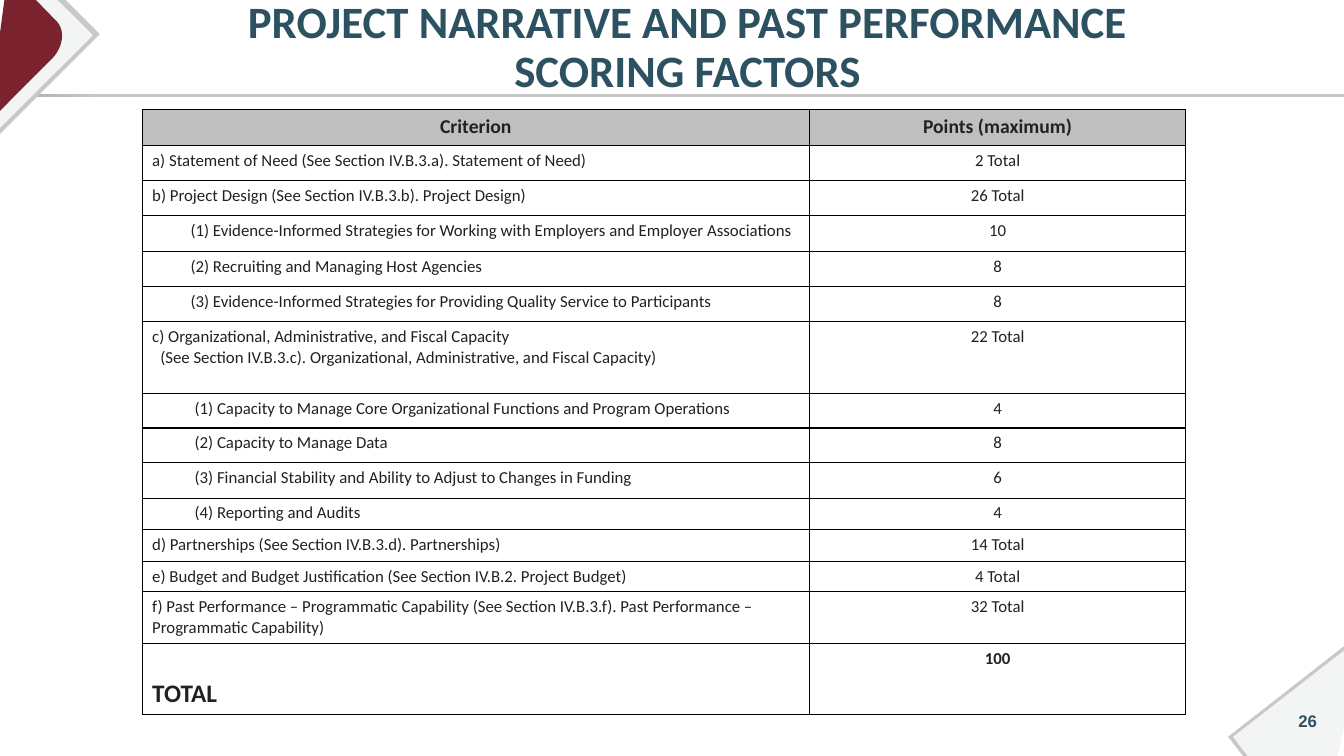
from lxml.etree import SubElement
from pptx import Presentation
from pptx.dml.color import RGBColor
from pptx.enum.shapes import MSO_SHAPE
from pptx.enum.text import MSO_ANCHOR, PP_ALIGN
from pptx.oxml.ns import qn
from pptx.util import Inches, Pt

NAVY = RGBColor(0x2C, 0x52, 0x61)
INK = RGBColor(0x24, 0x20, 0x21)
MAROON = RGBColor(0x7A, 0x23, 0x2F)
SILVER = RGBColor(0xC8, 0xC8, 0xC6)
STEEL = RGBColor(0xAB, 0xAB, 0xA8)
PALE = RGBColor(0xF3, 0xF4, 0xF4)
HEADER = RGBColor(0xBF, 0xBF, 0xBF)

ROW = 0.35
SUB = 0.38   # indent of a sub-criterion in b)
DEEP = 0.42  # indent of a sub-criterion in c)

# Each row: height, criterion, points, indent
DESIGN_ROWS = [
    (ROW, "Criterion", "Points (maximum)", 0),
    (ROW, "a) Statement of Need (See Section IV.B.3.a). Statement of Need)", "2 Total", 0),
    (ROW, "b) Project Design (See Section IV.B.3.b). Project Design)", "26 Total", 0),
    (ROW, "(1) Evidence-Informed Strategies for Working with Employers and Employer Associations", "10", SUB),
    (ROW, "(2) Recruiting and Managing Host Agencies", "8", SUB),
    (ROW, "(3) Evidence-Informed Strategies for Providing Quality Service to Participants", "8", SUB),
    (0.71, "c) Organizational, Administrative, and Fiscal Capacity\n"
           "(See Section IV.B.3.c). Organizational, Administrative, and Fiscal Capacity)", "22 Total", 0),
    (ROW, "(1) Capacity to Manage Core Organizational Functions and Program Operations", "4", DEEP),
]
CAPACITY_ROWS = [
    (ROW, "(2) Capacity to Manage Data", "8", DEEP),
    (ROW, "(3) Financial Stability and Ability to Adjust to Changes in Funding", "6", DEEP),
]
CLOSING_ROWS = [
    (0.31, "(4) Reporting and Audits", "4", DEEP),
    (0.32, "d) Partnerships (See Section IV.B.3.d). Partnerships)", "14 Total", 0),
    (0.3, "e) Budget and Budget Justification (See Section IV.B.2. Project Budget)", "4 Total", 0),
    (0.51, "f) Past Performance – Programmatic Capability (See Section IV.B.3.f). "
           "Past Performance – Programmatic Capability)", "32 Total", 0),
    (0.71, "TOTAL", "100", 0),
]


def write(frame, text, size=12, bold=False, color=INK, font="Calibri",
          align=PP_ALIGN.LEFT, indents=(0,), spacing=None):
    """Fill a text frame, one paragraph per line; the last indent serves all further lines."""
    for index, line in enumerate(text.split("\n")):
        para = frame.add_paragraph() if index else frame.paragraphs[0]
        indent = indents[min(index, len(indents) - 1)]
        if indent:
            para._p.get_or_add_pPr().set("marL", str(Inches(indent)))
        para.alignment = align
        if spacing:
            para.line_spacing = spacing
        span = para.add_run()
        span.text = line
        span.font.name, span.font.size, span.font.bold = font, Pt(size), bold
        span.font.color.rgb = color


def add_borders(cell, width=0.75):
    properties = cell._tc.get_or_add_tcPr()
    for side in ("a:lnL", "a:lnR", "a:lnT", "a:lnB"):
        line = SubElement(properties, qn(side), w=str(Pt(width)))
        SubElement(SubElement(line, qn("a:solidFill")), qn("a:srgbClr"), val="000000")


def curve(start, first, second, end, steps=12):
    """Points along a cubic Bezier curve, without its start."""
    points = []
    for step in range(1, steps + 1):
        t = step / steps
        weights = ((1 - t) ** 3, 3 * t * (1 - t) ** 2, 3 * t * t * (1 - t), t ** 3)
        points.append(tuple(sum(w * p[axis] for w, p in zip(weights, (start, first, second, end)))
                            for axis in (0, 1)))
    return points


class ScoringSlide:
    def __init__(self, deck):
        self.page = deck.slides.add_slide(deck.slide_layouts[6])

    def rule(self, left, top, width, height):
        bar = self.page.shapes.add_shape(
            MSO_SHAPE.RECTANGLE, Inches(left), Inches(top), Inches(width), Inches(height))
        bar.shadow.inherit = False
        bar.line.fill.background()
        bar.fill.gradient()
        bar.fill.gradient_angle = 0
        for stop, position, color in zip(bar.fill.gradient_stops, (0, 0.08), (STEEL, SILVER)):
            stop.position, stop.color.rgb = position, color

    def polygon(self, points, color):
        points = [(Inches(x), Inches(y)) for x, y in points]
        builder = self.page.shapes.build_freeform(*points[0])
        builder.add_line_segments(points[1:], close=True)
        shape = builder.convert_to_shape()
        shape.shadow.inherit = False
        shape.fill.solid()
        shape.fill.fore_color.rgb = color
        shape.line.fill.background()

    def text(self, left, top, width, height, text, **style):
        box = self.page.shapes.add_textbox(Inches(left), Inches(top), Inches(width), Inches(height))
        box.text_frame.word_wrap = True
        box.text_frame.vertical_anchor = MSO_ANCHOR.MIDDLE
        write(box.text_frame, text, color=NAVY, bold=True, **style)

    def table(self, top, rows):
        widths = (6.62, 3.73)
        height = sum(row[0] for row in rows)
        table = self.page.shapes.add_table(
            len(rows), 2, Inches(1.41), Inches(top), Inches(sum(widths)), Inches(height)).table
        table.first_row = table.horz_banding = False
        for column, width in zip(table.columns, widths):
            column.width = Inches(width)
        for index, (row_height, criterion, points, indent) in enumerate(rows):
            table.rows[index].height = Inches(row_height)
            is_header, is_total = criterion == "Criterion", criterion == "TOTAL"
            size, bold = 14 if is_header else 12, is_header or is_total
            left, right = table.cell(index, 0), table.cell(index, 1)
            for cell in (left, right):
                add_borders(cell)
                if is_header:
                    cell.fill.solid()
                    cell.fill.fore_color.rgb = HEADER
                else:
                    cell.fill.background()
            if is_total:
                left.vertical_anchor = MSO_ANCHOR.BOTTOM
            write(left.text_frame, criterion, size=18 if is_total else size, bold=bold,
                  align=PP_ALIGN.CENTER if is_header else PP_ALIGN.LEFT,
                  indents=(indent, indent or 0.08))
            write(right.text_frame, points, size=size, bold=bold, align=PP_ALIGN.CENTER)


def main():
    deck = Presentation()
    deck.slide_width, deck.slide_height = Inches(13.33), Inches(7.5)
    slide = ScoringSlide(deck)

    slide.rule(0, 0.93, 13.33, 0.03)
    slide.polygon([(0.07, -0.12), (0.48, -0.17), (0.99, 0.34), (-0.14, 1.47)], SILVER)
    slide.polygon([(0.07, -0.12), (0.41, -0.16), (0.92, 0.35), (-0.13, 1.4)], PALE)
    rounded_tip = curve((0.56, 0.21), (0.65, 0.3), (0.63, 0.47), (0.51, 0.59))
    slide.polygon([(0.06, -0.12), (0.22, -0.14), (0.56, 0.21), *rounded_tip, (-0.12, 1.22)], MAROON)
    slide.polygon([(13.55, 6.24), (13.21, 7.7), (12.47, 7.68), (12.18, 7.31)], SILVER)
    slide.polygon([(13.54, 6.29), (13.22, 7.7), (12.52, 7.69), (12.23, 7.31)], PALE)

    slide.text(12.45, 6.95, 0.71, 0.4, "26", font="Arial", align=PP_ALIGN.RIGHT)
    slide.text(2.07, 0.09, 9.5, 0.78, "PROJECT NARRATIVE AND PAST PERFORMANCE SCORING FACTORS",
               size=32, align=PP_ALIGN.CENTER, spacing=0.9)
    slide.table(1.09, DESIGN_ROWS)
    slide.table(4.24, CAPACITY_ROWS)
    slide.table(4.94, CLOSING_ROWS)
    deck.save("out.pptx")


if __name__ == "__main__":
    main()
